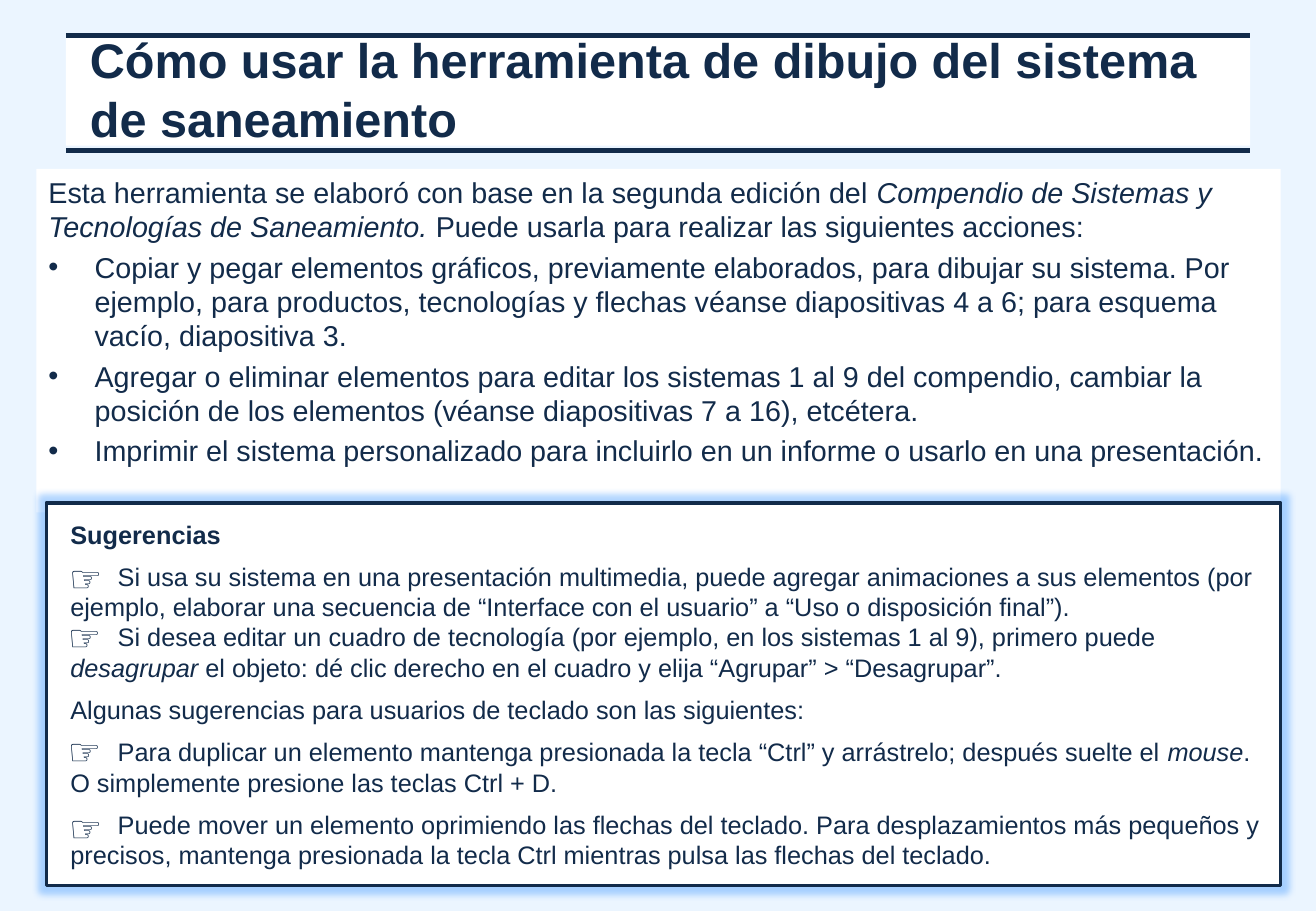
from dataclasses import dataclass
from typing import Optional

from lxml.etree import SubElement
from pptx import Presentation
from pptx.dml.color import RGBColor
from pptx.enum.shapes import MSO_CONNECTOR as Link, MSO_SHAPE as Preset
from pptx.enum.text import MSO_ANCHOR as Anchor, PP_ALIGN as Align
from pptx.oxml.ns import qn
from pptx.util import Emu, Inches, Pt

COLORS = {"sky": "EBF5FF", "navy": "122B4A", "paper": "FFFFFF", "glow": "3C96FF"}
FONT = "Arial"
WIDTH, HEIGHT = Inches(10.83), Inches(7.5)


@dataclass(frozen=True)
class Area:
    """Left, top, width and height in percent of the slide."""
    left: float
    top: float
    width: float
    height: float

    def box(self) -> tuple[Emu, Emu, Emu, Emu]:
        return across(self.left), down(self.top), across(self.width), down(self.height)


@dataclass(frozen=True)
class Line:
    """A paragraph; odd pieces between asterisks are italic."""
    text: str
    indent: float = 0
    first: float = 0
    before: float = 0
    bullet: Optional[str] = None


def across(percent: float) -> Emu:
    return Emu(round(WIDTH * percent / 100))


def down(percent: float) -> Emu:
    return Emu(round(HEIGHT * percent / 100))


def color(key: str) -> RGBColor:
    return RGBColor.from_string(COLORS[key])


def write(shape, lines: list[Line], *, size: float, bold: bool = False,
          bold_first: bool = False, anchor=Anchor.TOP,
          margins: tuple[float, float] = (0.05, 0.05)) -> None:
    frame = shape.text_frame
    frame.word_wrap = True
    frame.vertical_anchor = anchor
    frame.margin_top, frame.margin_bottom = map(Inches, margins)
    for index, line in enumerate(lines):
        paragraph = frame.paragraphs[0] if index == 0 else frame.add_paragraph()
        paragraph.alignment = Align.LEFT
        paragraph.space_before = Pt(line.before)
        properties = paragraph._p.get_or_add_pPr()
        properties.set("marL", str(Inches(line.indent)))
        properties.set("indent", str(Inches(line.first)))
        if line.bullet:
            SubElement(properties, qn("a:buFont"), typeface=FONT)
            SubElement(properties, qn("a:buChar"), char=line.bullet)
        for position, piece in enumerate(line.text.split("*")):
            run = paragraph.add_run()
            run.text = piece
            run.font.name = FONT
            run.font.size = Pt(size)
            run.font.bold = bold or (bold_first and index == 0)
            run.font.italic = position % 2 == 1
            run.font.color.rgb = color("navy")


def add_panel(slide, area: Area, *, preset=Preset.RECTANGLE, border: float = 0):
    panel = slide.shapes.add_shape(preset, *area.box())
    panel.shadow.inherit = False
    panel.fill.solid()
    panel.fill.fore_color.rgb = color("paper")
    if border:
        panel.line.color.rgb = color("navy")
        panel.line.width = Pt(border)
    else:
        panel.line.fill.background()
    return panel


def add_glow(panel, radius: float, opacity: int) -> None:
    effects = panel._element.spPr.find(qn("a:effectLst"))
    glow = SubElement(effects, qn("a:glow"), rad=str(Pt(radius)))
    tint = SubElement(glow, qn("a:srgbClr"), val=COLORS["glow"])
    SubElement(tint, qn("a:alpha"), val=str(opacity * 1000))


def add_rule(slide, top: float) -> None:
    left, right, y = across(TITLE.left), across(TITLE.left + TITLE.width), down(top)
    rule = slide.shapes.add_connector(Link.STRAIGHT, left, y, right, y)
    rule.line.color.rgb = color("navy")
    rule.line.width = Pt(3)
    SubElement(rule._element.spPr, qn("a:effectLst"))


def action(text: str) -> Line:
    return Line(text, indent=0.38, first=-0.38, before=3.4, bullet="•")


def tip(text: str, before: float = 0) -> Line:
    return Line(text, indent=0.1, first=0.39, before=before)


TITLE = Area(5, 4, 90, 12)
ACTIONS = Area(2.77, 18.53, 94.55, 37.73)
TIPS = Area(3.51, 55.2, 93.81, 42)
RULE_TOPS = (3.87, 16.53)
HANDS = [Area(left, top, 4.16, 6.27) for left, top in
         ((4.34, 60.27), (4.25, 66.8), (4.25, 79.33), (4.34, 87.73))]
GAP = 7

TITLE_LINES = [Line("Cómo usar la herramienta de dibujo del sistema de saneamiento", indent=0.1)]
ACTION_LINES = [
    Line("Esta herramienta se elaboró con base en la segunda edición del *Compendio de "
         "Sistemas y Tecnologías de Saneamiento.* Puede usarla para realizar las "
         "siguientes acciones:", before=3.4),
    action("Copiar y pegar elementos gráficos, previamente elaborados, para dibujar su "
           "sistema. Por ejemplo, para productos, tecnologías y flechas véanse "
           "diapositivas 4 a 6; para esquema vacío, diapositiva 3."),
    action("Agregar o eliminar elementos para editar los sistemas 1 al 9 del compendio, "
           "cambiar la posición de los elementos (véanse diapositivas 7 a 16), etcétera."),
    action("Imprimir el sistema personalizado para incluirlo en un informe o usarlo en "
           "una presentación."),
]
TIP_LINES = [
    Line("Sugerencias", indent=0.1),
    tip("Si usa su sistema en una presentación multimedia, puede agregar animaciones a "
        "sus elementos (por ejemplo, elaborar una secuencia de “Interface con el "
        "usuario” a “Uso o disposición final”).", GAP),
    tip("Si desea editar un cuadro de tecnología (por ejemplo, en los sistemas 1 al 9), "
        "primero puede *desagrupar* el objeto: dé clic derecho en el cuadro y elija "
        "“Agrupar” > “Desagrupar”."),
    Line("Algunas sugerencias para usuarios de teclado son las siguientes:",
         indent=0.1, before=GAP),
    tip("Para duplicar un elemento mantenga presionada la tecla “Ctrl” y arrástrelo; "
        "después suelte el *mouse*. O simplemente presione las teclas Ctrl + D.", GAP),
    tip("Puede mover un elemento oprimiendo las flechas del teclado. Para "
        "desplazamientos más pequeños y precisos, mantenga presionada la tecla Ctrl "
        "mientras pulsa las flechas del teclado.", GAP),
]


def main() -> None:
    deck = Presentation()
    deck.slide_width, deck.slide_height = WIDTH, HEIGHT
    slide = deck.slides.add_slide(deck.slide_layouts[6])
    slide.background.fill.solid()
    slide.background.fill.fore_color.rgb = color("sky")

    write(add_panel(slide, ACTIONS), ACTION_LINES, size=17)
    write(add_panel(slide, TITLE), TITLE_LINES, size=28.8, bold=True,
          anchor=Anchor.MIDDLE, margins=(0, 0.04))
    for top in RULE_TOPS:
        add_rule(slide, top)

    tips = add_panel(slide, TIPS, preset=Preset.FLOWCHART_PROCESS, border=2)
    add_glow(tips, radius=8, opacity=40)
    write(tips, TIP_LINES, size=15, bold_first=True, anchor=Anchor.MIDDLE)
    for hand in HANDS:
        write(slide.shapes.add_textbox(*hand.box()), [Line("☞")], size=22, bold=True)

    deck.save("out.pptx")


if __name__ == "__main__":
    main()
